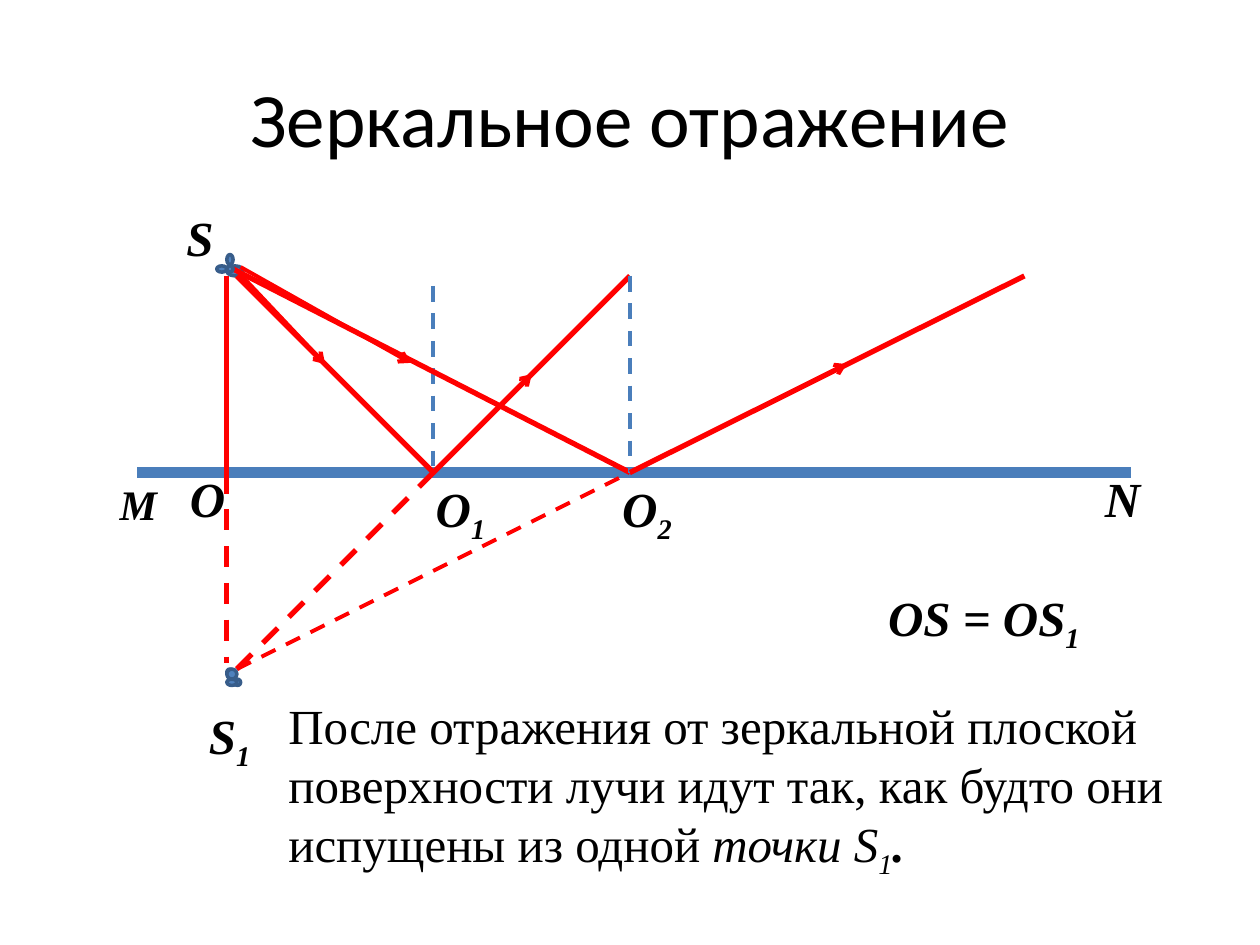
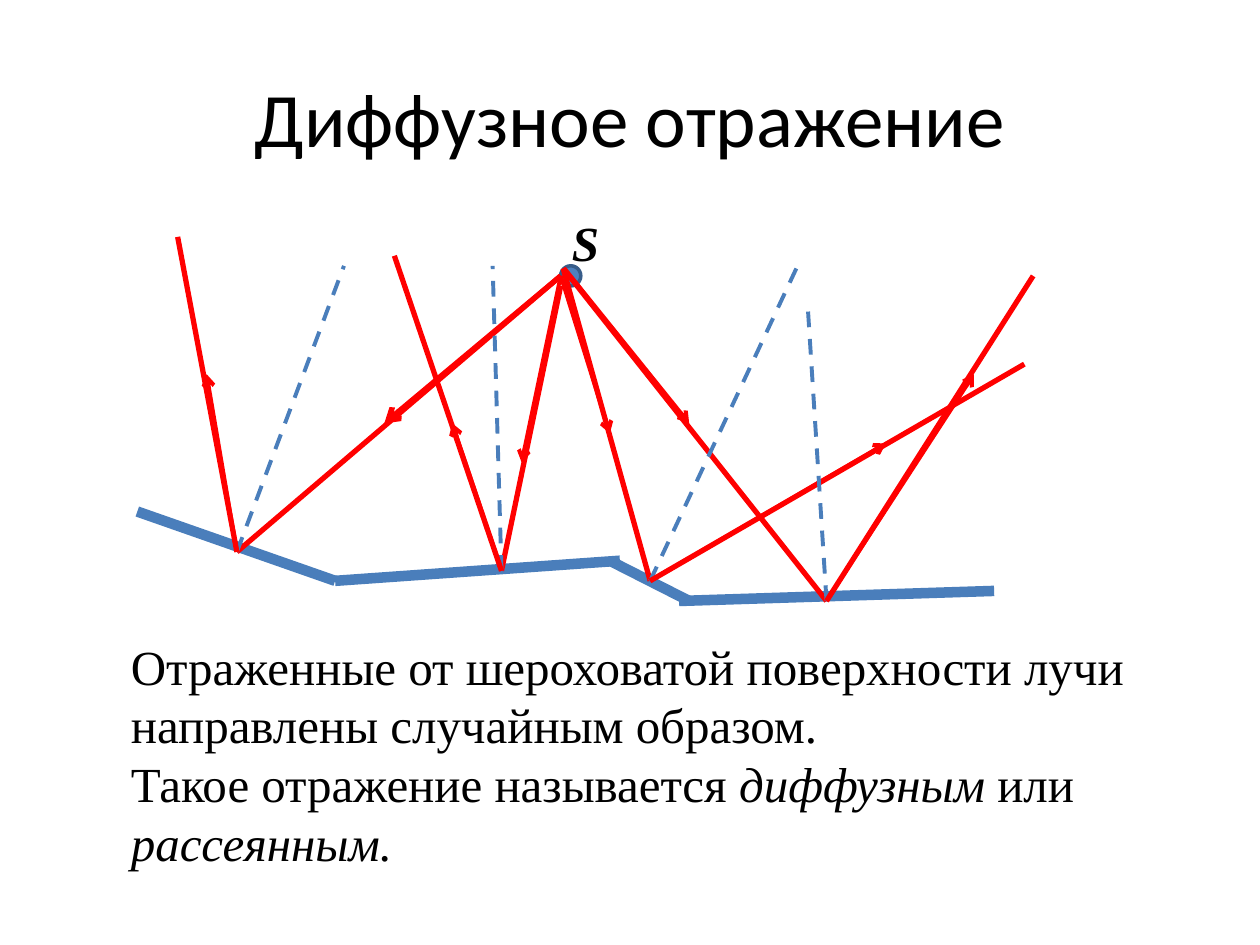
"""Builds two slides on mirror and diffuse reflection of light."""
from lxml.etree import SubElement
from pptx import Presentation
from pptx.dml.color import RGBColor
from pptx.enum.dml import MSO_LINE_DASH_STYLE as Dash
from pptx.enum.shapes import MSO_CONNECTOR as Connector, MSO_SHAPE as Shape
from pptx.oxml.ns import qn
from pptx.util import Inches, Pt

COLORS = {"text": "000000", "ray": "FF0000", "mirror": "4A7EBB",
          "source": "4F81BD", "source_edge": "385D8A"}
TITLE_FONT, BODY_FONT = "Calibri", "Times New Roman"
BODY_SIZE = 28

STYLES = {
    "mirror": ("mirror", 6, False, False),
    "normal": ("mirror", 2.25, True, False),
    "ray": ("ray", 3, False, False),
    "virtual": ("ray", 3, True, False),
    "thin virtual": ("ray", 2.25, True, False),
    "arrow": ("ray", 2.25, False, True),
    "bold arrow": ("ray", 3, False, True),
}

O, O1, O2 = (1.8, 3.75), (3.44, 3.75), (5, 3.75)
IMAGE = (1.88, 5.31)
MIRROR_REFLECTION = {
    "title": "Зеркальное отражение",
    "mirrors": [((1.09, 3.75), (8.98, 3.75))],
    "sources_below": [(1.8, 2.11, 0.13, 0.08), (1.8, 5.31, 0.05, 0.05)],
    "lines": [
        ("ray", (1.8, 2.19), O),
        ("virtual", O, (1.8, 5.26)),
        ("ray", (1.88, 2.19), O1),
        ("ray", O1, (5, 2.19)),
        ("virtual", IMAGE, O1),
        ("arrow", (1.91, 2.18), (2.58, 2.89)),
        ("arrow", O1, (4.22, 2.97)),
        ("normal", (3.44, 2.27), O1),
        ("ray", (1.82, 2.12), O2),
        ("thin virtual", IMAGE, O2),
        ("arrow", (1.91, 2.12), (3.26, 2.88)),
        ("arrow", O2, (6.72, 2.89)),
        ("normal", (5, 2.19), O2),
        ("ray", O2, (8.13, 2.19)),
    ],
    "sources_above": [
        (1.8, 2.11, 0.05, 0.05), (1.8, 2.02, 0.05, 0.08), (1.72, 2.11, 0.08, 0.05),
        (1.8, 5.31, 0.08, 0.08), (1.86, 5.39, 0.05, 0.05), (1.8, 5.39, 0.08, 0.05),
    ],
    "labels": [
        ((1.38, 1.6, 0.79, 0.57), "S", "", BODY_SIZE),
        ((1.56, 5.55, 0.8, 0.66), "S", "1", BODY_SIZE),
        ((0.85, 3.75, 0.72, 0.5), "M", "", 24),
        ((8.67, 3.67, 0.55, 0.54), "N", "", BODY_SIZE),
        ((1.41, 3.67, 0.56, 0.57), "O", "", BODY_SIZE),
        ((3.36, 3.75, 0.97, 1.04), "O", "1", BODY_SIZE),
        ((4.84, 3.75, 1.06, 1.04), "O", "2", BODY_SIZE),
        ((6.95, 4.61, 2.3, 1.04), "OS = OS", "1", BODY_SIZE),
    ],
    "explanation_box": (2.19, 5.47, 7.19, 1.54),
    "explanation": [[
        ("После отражения от зеркальной плоской поверхности лучи идут так, "
         "как будто они испущены из одной ", ""),
        ("точки S", "italic"), ("1", "italic sub"), (".", "italic bold"),
    ]],
}

S = (4.45, 2.19)
HIT1, HIT2, HIT3, HIT4 = (1.88, 4.38), (3.98, 4.53), (5.16, 4.61), (6.56, 4.77)
DIFFUSE_REFLECTION = {
    "title": "Диффузное отражение",
    "mirrors": [((1.09, 4.06), (2.66, 4.61)), ((2.66, 4.61), (4.92, 4.45)),
                ((4.84, 4.45), (5.47, 4.77)), ((5.39, 4.77), (7.89, 4.69))],
    "sources_below": [(4.45, 2.11, 0.16, 0.16)],
    "lines": [
        ("ray", S, HIT1),
        ("ray", (4.45, 2.27), HIT2),
        ("ray", (4.47, 2.13), HIT3),
        ("ray", (4.47, 2.13), HIT4),
        ("normal", HIT1, (2.73, 2.11)),
        ("ray", HIT1, (1.41, 1.88)),
        ("bold arrow", S, (3.05, 3.36)),
        ("arrow", HIT1, (1.64, 2.97)),
        ("arrow", S, (4.14, 3.67)),
        ("normal", HIT2, (3.91, 2.11)),
        ("ray", HIT2, (3.13, 2.03)),
        ("arrow", HIT2, (3.59, 3.36)),
        ("arrow", S, (4.84, 3.44)),
        ("normal", HIT3, (6.33, 2.11)),
        ("ray", HIT3, (8.13, 2.89)),
        ("arrow", HIT3, (7.03, 3.52)),
        ("normal", HIT4, (6.41, 2.42)),
        ("arrow", (4.48, 2.13), (5.47, 3.36)),
        ("ray", HIT4, (8.2, 2.19)),
        ("arrow", HIT4, (7.73, 2.97)),
    ],
    "sources_above": [],
    "labels": [((4.44, 1.64, 0.41, 0.54), "S", "", BODY_SIZE)],
    "explanation_box": (0.94, 5, 8.22, 1.84),
    "explanation": [
        [("Отраженные от шероховатой поверхности лучи", "")],
        [("направлены случайным образом.", "")],
        [("Такое отражение называется ", ""), ("диффузным ", "italic"), ("или", "")],
        [("рассеянным.", "italic")],
    ],
}


def color(name):
    return RGBColor.from_string(COLORS[name])


def add_run(paragraph, text, style="", size=BODY_SIZE, face=BODY_FONT):
    run = paragraph.add_run()
    run.text = text
    font = run.font
    font.name, font.size = face, Pt(size)
    font.bold, font.italic = "bold" in style, "italic" in style
    font.color.rgb = color("text")
    if "sub" in style:
        run._r.get_or_add_rPr().set("baseline", "-25000")


def add_text(slide, box, paragraphs, size=BODY_SIZE):
    frame = slide.shapes.add_textbox(*map(Inches, box)).text_frame
    frame.word_wrap = True
    for index, runs in enumerate(paragraphs):
        paragraph = frame.add_paragraph() if index else frame.paragraphs[0]
        for text, style in runs:
            add_run(paragraph, text, style, size)


def add_line(slide, style, start, end):
    tint, width, dashed, arrow = STYLES[style]
    connector = slide.shapes.add_connector(
        Connector.STRAIGHT, *map(Inches, start + end))
    connector.line.color.rgb = color(tint)
    connector.line.width = Pt(width)
    if dashed:
        connector.line.dash_style = Dash.DASH
    properties = connector._element.spPr
    if arrow:
        SubElement(properties.find(qn("a:ln")), qn("a:tailEnd"), type="arrow")
    SubElement(properties, qn("a:effectLst"))


def add_source(slide, box):
    source = slide.shapes.add_shape(Shape.OVAL, *map(Inches, box))
    source.shadow.inherit = False
    source.fill.solid()
    source.fill.fore_color.rgb = color("source")
    source.line.color.rgb = color("source_edge")
    source.line.width = Pt(2)


def add_reflection(deck, content):
    slide = deck.slides.add_slide(deck.slide_layouts[5])
    title = slide.shapes.title
    title.left, title.top, title.width, title.height = map(Inches, (0.5, 0.3, 9, 1.25))
    add_run(title.text_frame.paragraphs[0], content["title"], size=44, face=TITLE_FONT)
    for start, end in content["mirrors"]:
        add_line(slide, "mirror", start, end)
    for box in content["sources_below"]:
        add_source(slide, box)
    for style, start, end in content["lines"]:
        add_line(slide, style, start, end)
    for box in content["sources_above"]:
        add_source(slide, box)
    for box, letter, index, size in content["labels"]:
        runs = [(letter, "bold italic")]
        if index:
            runs.append((index, "bold italic sub"))
        add_text(slide, box, [runs], size)
    add_text(slide, content["explanation_box"], content["explanation"])


def main():
    deck = Presentation()
    deck.slide_width, deck.slide_height = Inches(10), Inches(7.5)
    for content in (MIRROR_REFLECTION, DIFFUSE_REFLECTION):
        add_reflection(deck, content)
    deck.save("out.pptx")


if __name__ == "__main__":
    main()
